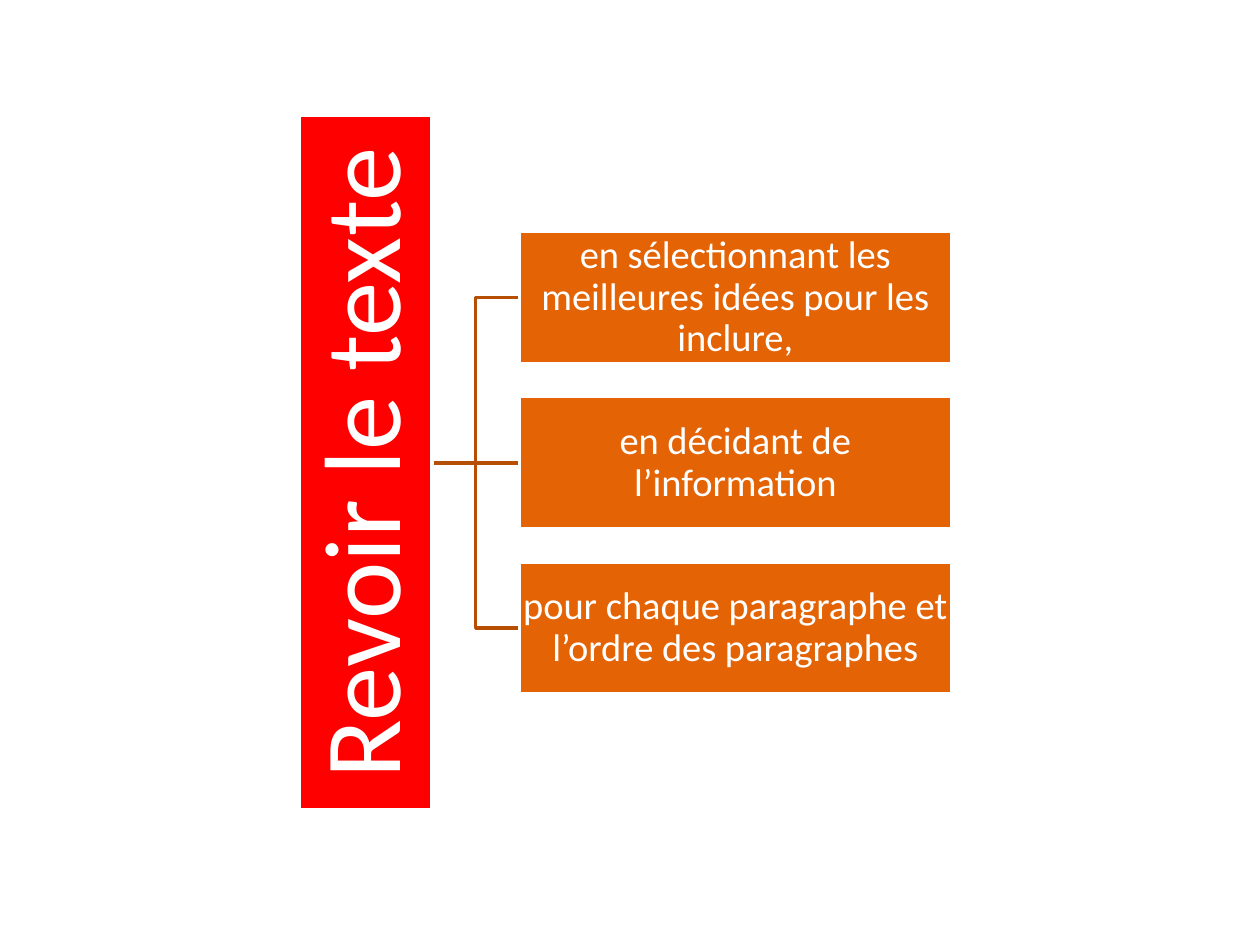
from lxml.etree import SubElement
from pptx import Presentation
from pptx.dml.color import RGBColor
from pptx.enum.shapes import MSO_CONNECTOR, MSO_SHAPE
from pptx.enum.text import MSO_ANCHOR, PP_ALIGN
from pptx.oxml.ns import qn
from pptx.util import Cm, Pt

COLORS = {"root": "FF0000", "step": "E36305", "link": "B64F04", "white": "FFFFFF"}
STEPS = [
    "en sélectionnant les meilleures idées pour les inclure,",
    "en décidant de l’information",
    "pour chaque paragraphe et l’ordre des paragraphes",
]
BOX_H, PITCH = 2.67, 3.33
ROOT_RIGHT, STEP_LEFT, STEP_W = 8.71, 10.47, 8.71
ROOT_LEN, MID_Y = 14, 9.33


def add_box(left, top, width, text, fill, size, inset):
    sp = slide.shapes.add_shape(
        MSO_SHAPE.RECTANGLE, Cm(left), Cm(top), Cm(width), Cm(BOX_H))
    sp.shadow.inherit = False
    sp.fill.solid()
    sp.fill.fore_color.rgb = RGBColor.from_string(COLORS[fill])
    sp.line.color.rgb = RGBColor.from_string(COLORS["white"])
    sp.line.width = Pt(2)
    tf = sp.text_frame
    tf.word_wrap = True
    tf.vertical_anchor = MSO_ANCHOR.MIDDLE
    tf.margin_left = tf.margin_right = tf.margin_top = tf.margin_bottom = Cm(inset)
    p = tf.paragraphs[0]
    p.text = text
    p.alignment = PP_ALIGN.CENTER
    p.line_spacing = 0.9
    p.font.name = "Calibri"
    p.font.size = Pt(size)
    p.font.color.rgb = RGBColor.from_string(COLORS["white"])
    return sp


prs = Presentation()
prs.slide_width, prs.slide_height = Cm(25.4), Cm(19.05)
slide = prs.slides.add_slide(prs.slide_layouts[6])

# Links, behind the boxes
centers = [MID_Y + (i - 1) * PITCH for i in range(len(STEPS))]
links = []
for y in centers:
    kind = MSO_CONNECTOR.STRAIGHT if y == MID_Y else MSO_CONNECTOR.ELBOW
    link = slide.shapes.add_connector(
        kind, Cm(ROOT_RIGHT), Cm(MID_Y), Cm(STEP_LEFT), Cm(y))
    link.line.color.rgb = RGBColor.from_string(COLORS["link"])
    link.line.width = Pt(2)
    SubElement(link._element.spPr, qn("a:effectLst"))
    links.append(link)

# Root box, turned to read upwards
root = add_box(ROOT_RIGHT - BOX_H / 2 - ROOT_LEN / 2, MID_Y - BOX_H / 2, ROOT_LEN,
               "Revoir le texte", "root", 62, 0.1)
root.rotation = 270

# Step boxes, each joined to the root
for text, y, link in zip(STEPS, centers, links):
    step = add_box(STEP_LEFT, y - BOX_H / 2, STEP_W, text, "step", 22, 0.05)
    link.begin_connect(root, 2)  # the bottom side faces right once turned
    link.begin_x, link.begin_y = Cm(ROOT_RIGHT), Cm(MID_Y)
    link.end_connect(step, 1)

prs.save("out.pptx")
